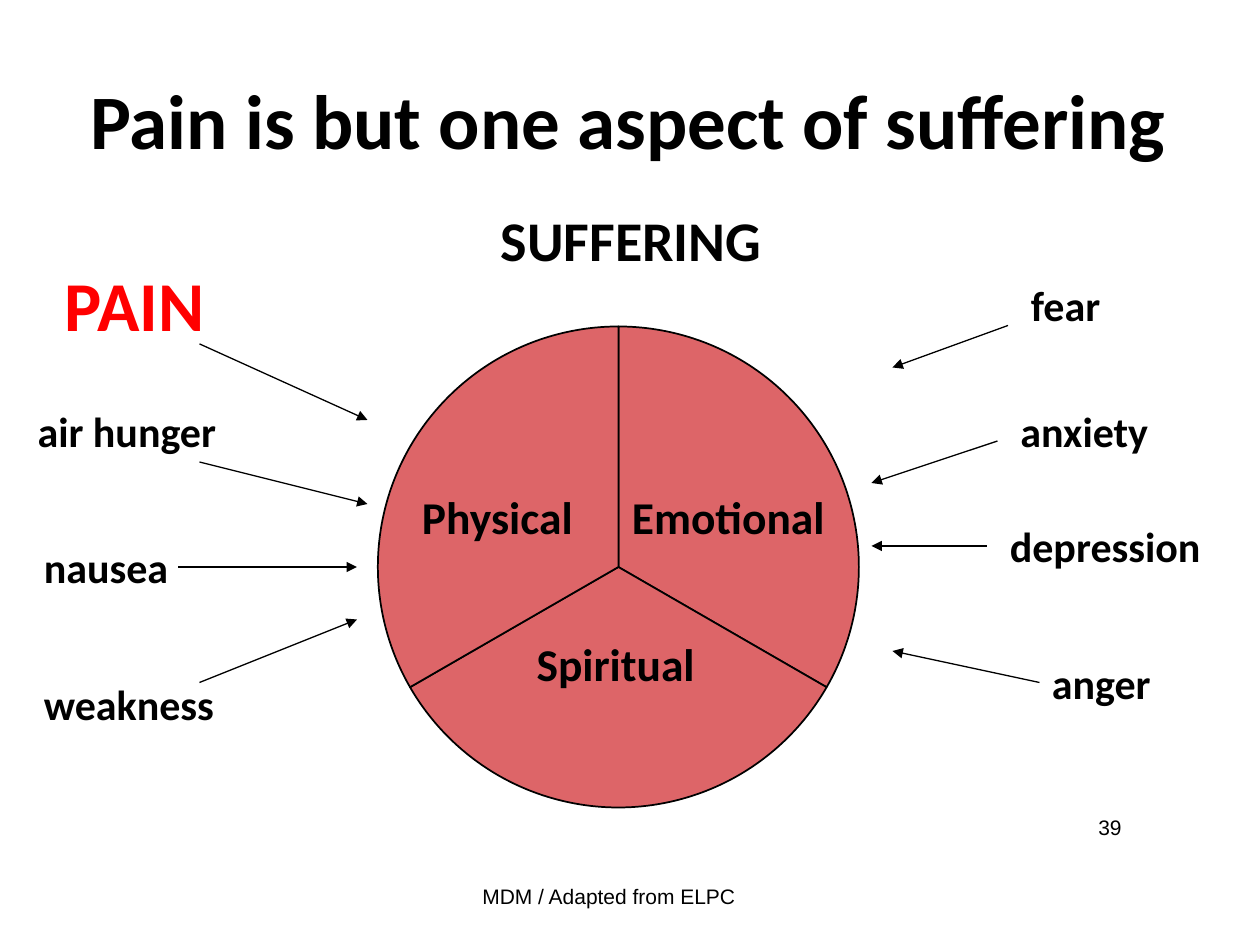
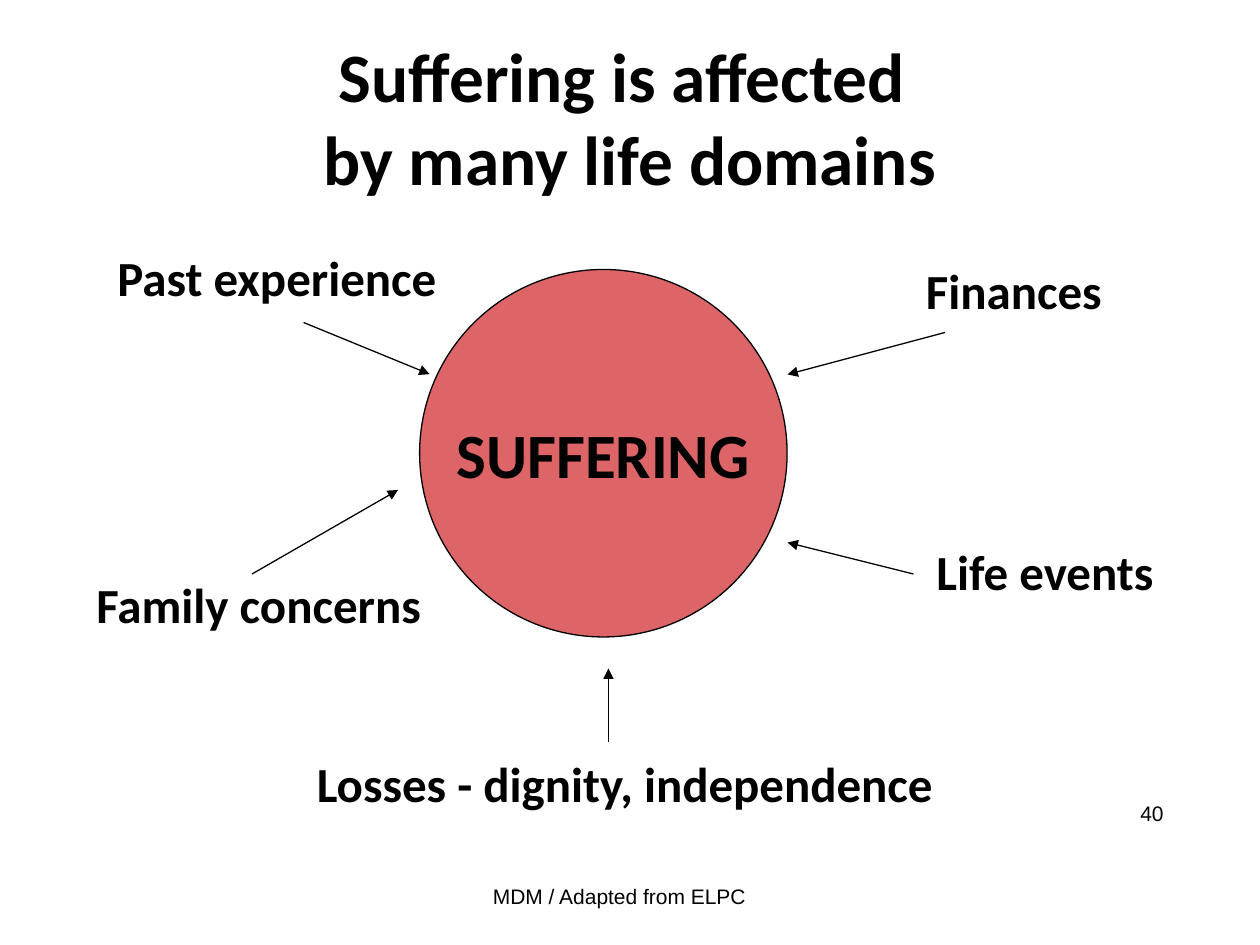
"""Builds two slides on the sources of suffering."""
import pptx
import pptx.chart.data
import pptx.dml.color
import pptx.enum.chart
import pptx.enum.shapes
import pptx.enum.text
import pptx.oxml
import pptx.oxml.ns
import pptx.util

Pt = pptx.util.Pt
ALIGN = pptx.enum.text.PP_ALIGN
MIDDLE = pptx.enum.text.MSO_ANCHOR.MIDDLE

BLACK = pptx.dml.color.RGBColor(0x00, 0x00, 0x00)
RED = pptx.dml.color.RGBColor(0xFF, 0x00, 0x00)
ROSE = pptx.dml.color.RGBColor(0xDD, 0x65, 0x68)

FOOTER = "MDM / Adapted from ELPC"

ASPECTS = {
    "title": "Pain is but one aspect of suffering",
    "title_size": 44,
    "title_at": (35.3, 23),
    "footer_left": 234,
    "number": "39",
    "number_at": (480, 458.3),
}
DOMAINS = {
    "title": "Suffering is affected \vby many life domains",
    "title_size": 39.6,
    "title_at": (36, 21.6),
    "footer_left": 240,
    "number": "40",
    "number_at": (504, 450.4),
}

# text, left, top, width
SEGMENTS = [
    ("Physical", 234, 276, 101.5),
    ("Emotional", 354, 276, 126),
    ("Spiritual", 299.5, 360, 106),
]
SEGMENT_VALUES = [33, 33, 33]
HEADING = ("SUFFERING", 279, 114, 165)
PAIN = ("PAIN", 30, 146, 95)

SYMPTOMS = [
    ("air hunger", 14.4, 228, 117.4),
    ("nausea", 18, 306, 102),
    ("weakness", 18, 384, 113),
    ("fear", 582, 156, 102),
    ("anxiety", 576, 228, 89.3),
    ("depression", 570, 294, 144),
    ("anger", 594, 372, 73.4),
]
SYMPTOM_ARROWS = [
    (114, 196.5, 210, 240),
    (114, 264, 210, 288),
    (102, 324, 204, 324),
    (114, 390, 204, 354),
    (576, 186, 510, 210),
    (570, 252, 498, 276),
    (564, 312, 498, 312),
    (594, 390, 510, 372),
]

LIFE_DOMAINS = [
    ("Past experience", 60, 138, 200),
    ("Family concerns", 48, 324.5, 202),
    ("Losses - dignity, independence", 174, 427, 371),
    ("Finances", 522, 145.5, 120),
    ("Life events", 528, 306, 144),
]
DOMAIN_ARROWS = [
    (173.5, 184.3, 245.5, 213.8),
    (144, 328, 227.5, 280),
    (347.7, 424, 347.7, 382),
    (540, 190, 450, 214),
    (522, 328, 450, 310),
]


def write(frame, text, size, font="Calibri", color=BLACK, bold=True,
          align=ALIGN.LEFT, anchor=pptx.enum.text.MSO_ANCHOR.TOP, wrap=True):
    """Fill a text frame with one formatted paragraph."""
    frame.word_wrap = wrap
    frame.vertical_anchor = anchor
    paragraph = frame.paragraphs[0]
    paragraph.text = text
    paragraph.alignment = align
    paragraph.font.size = Pt(size)
    for run in paragraph.runs:
        run.font.name = font
        run.font.size = Pt(size)
        run.font.bold = bold
        run.font.color.rgb = color


def add_text(slide, text, left, top, width, size, height=None, **style):
    """Place a text box, one line high unless a height is given."""
    height = height or size * 1.22 + 7.2
    box = slide.shapes.add_textbox(Pt(left), Pt(top), Pt(width), Pt(height))
    write(box.text_frame, text, size, **style)


def add_arrow(slide, *ends):
    """Draw a thin black arrow from the first point to the second."""
    arrow = slide.shapes.add_connector(
        pptx.enum.shapes.MSO_CONNECTOR.STRAIGHT, *map(Pt, ends))
    arrow.line.color.rgb = BLACK
    arrow.line.width = Pt(0.75)
    tip = pptx.oxml.parse_xml(
        f'<a:tailEnd {pptx.oxml.ns.nsdecls("a")} type="triangle"/>')
    arrow.line._get_or_add_ln().append(tip)
    effects = pptx.oxml.parse_xml(f'<a:effectLst {pptx.oxml.ns.nsdecls("a")}/>')
    arrow._element.spPr.append(effects)


def add_frame(deck, content):
    """Add a blank slide with its title, footer and number."""
    slide = deck.slides.add_slide(deck.slide_layouts[6])
    add_text(slide, content["title"], *content["title_at"], 648,
             content["title_size"], height=90, align=ALIGN.CENTER,
             anchor=MIDDLE)
    small = dict(size=12, height=28.8, font="Arial", bold=False, anchor=MIDDLE)
    add_text(slide, FOOTER, content["footer_left"], 497.8, 228,
             align=ALIGN.CENTER, **small)
    add_text(slide, content["number"], *content["number_at"], 168,
             align=ALIGN.RIGHT, **small)
    return slide


def add_pie(slide):
    """Draw the pie of three equal segments."""
    segments = pptx.chart.data.CategoryChartData()
    segments.categories = ["1", "2", "3"]
    segments.add_series("Series 1", SEGMENT_VALUES)
    pie = slide.shapes.add_chart(
        pptx.enum.chart.XL_CHART_TYPE.PIE,
        Pt(125.3), Pt(164.2), Pt(480.2), Pt(319.7), segments).chart
    pie.has_legend = False
    pie.has_title = False
    pie.font.name = "Calibri"
    pie.font.size = Pt(18)
    pie.font.color.rgb = BLACK
    plot = pie.plots[0]
    plot.vary_by_categories = False
    for index in range(len(SEGMENT_VALUES)):
        wedge = plot.series[0].points[index].format
        wedge.fill.solid()
        wedge.fill.fore_color.rgb = ROSE
        wedge.line.color.rgb = BLACK
        wedge.line.width = Pt(1)

    area = pie._chartSpace.chart.plotArea
    for layout in area.findall(pptx.oxml.ns.qn("c:layout")):
        area.remove(layout)
    bounds = {"x": 0.18, "y": 0.07, "w": 0.59, "h": 0.86}
    modes = "".join(f'<c:{axis}Mode val="edge"/>' for axis in "xy")
    sizes = "".join(f'<c:{key} val="{value}"/>' for key, value in bounds.items())
    area.insert(0, pptx.oxml.parse_xml(
        f'<c:layout {pptx.oxml.ns.nsdecls("c")}><c:manualLayout>'
        f'<c:layoutTarget val="inner"/>{modes}{sizes}'
        '</c:manualLayout></c:layout>'))


def build_aspects(deck):
    """Build the slide on the aspects of suffering."""
    slide = add_frame(deck, ASPECTS)
    add_pie(slide)
    for segment in SEGMENTS:
        add_text(slide, *segment, size=26)
    add_text(slide, *HEADING, size=32)
    add_text(slide, *PAIN, size=40, color=RED)
    for symptom in SYMPTOMS:
        add_text(slide, *symptom, size=24)
    for ends in SYMPTOM_ARROWS:
        add_arrow(slide, *ends)


def build_domains(deck):
    """Build the slide on the life domains."""
    slide = add_frame(deck, DOMAINS)
    circle = slide.shapes.add_shape(
        pptx.enum.shapes.MSO_SHAPE.OVAL, Pt(239.8), Pt(154), Pt(210), Pt(210))
    circle.shadow.inherit = False
    circle.fill.solid()
    circle.fill.fore_color.rgb = ROSE
    circle.line.color.rgb = BLACK
    circle.line.width = Pt(0.75)
    write(circle.text_frame, "SUFFERING", 36, align=ALIGN.CENTER,
          anchor=MIDDLE, wrap=False)
    for domain in LIFE_DOMAINS:
        add_text(slide, *domain, size=28)
    for ends in DOMAIN_ARROWS:
        add_arrow(slide, *ends)


def main():
    """Build and save the slides."""
    deck = pptx.Presentation()
    deck.slide_width, deck.slide_height = Pt(720), Pt(540)
    build_aspects(deck)
    build_domains(deck)
    deck.save("out.pptx")


if __name__ == "__main__":
    main()
